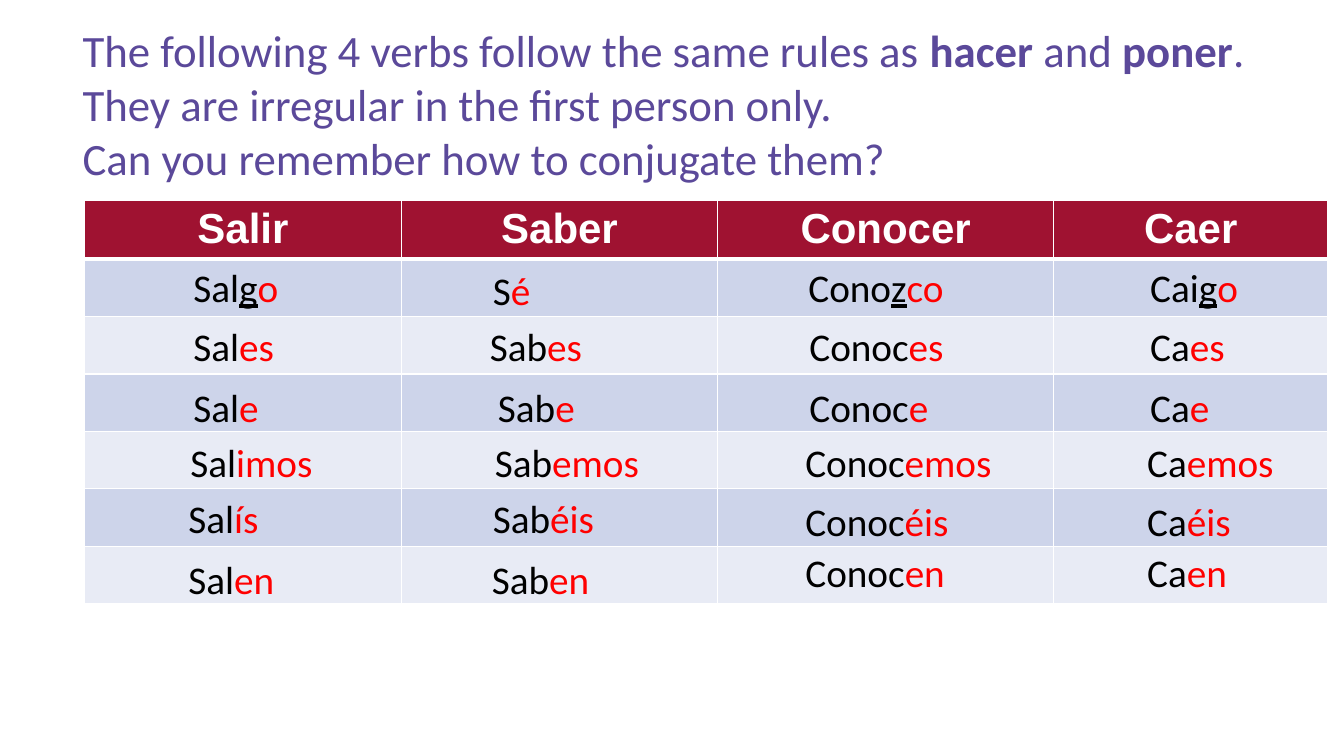
"""Build a slide on Spanish verbs that are irregular in the first person."""
from lxml import etree
from pptx import Presentation
from pptx.dml.color import RGBColor
from pptx.enum.text import MSO_AUTO_SIZE, PP_ALIGN
from pptx.oxml import parse_xml
from pptx.util import Inches, Pt

NS = "http://schemas.openxmlformats.org/drawingml/2006/main"
PURPLE, CRIMSON, WHITE = "5B499A", "9F1231", "FFFFFF"
BLACK, RED = "000000", "FF0000"
BANDS = ["E8EBF5", "CDD4EA"]


def rgb(color):
    """Turn a hex string into a colour."""
    return RGBColor.from_string(color)


def add_run(p, text, color, **formats):
    """Add a run of text with its font formats."""
    r = p.add_run()
    r.text = text
    r.font.color.rgb = rgb(color)
    for name, value in formats.items():
        setattr(r.font, name, value)


prs = Presentation()
prs.slide_width, prs.slide_height = Inches(13.33), Inches(7.5)
s = prs.slides.add_slide(prs.slide_layouts[6])

verbs = ["Salir", "Saber", "Conocer", "Caer"]
col_widths = [3.14, 3.14, 3.33, 2.72]
row_heights = [0.58] + [0.57] * 6
table = s.shapes.add_table(7, 4, Inches(0.84), Inches(1.99), Inches(12.33), Inches(4)).table
for col, width in zip(table.columns, col_widths):
    col.width = Inches(width)
for row, height in zip(table.rows, row_heights):
    row.height = Inches(height)

for i, row in enumerate(table.rows):
    for j, cell in enumerate(row.cells):
        cell.margin_left = cell.margin_right = Inches(0.08)
        cell.margin_top = cell.margin_bottom = Inches(0.05)
        tcPr = cell._tc.get_or_add_tcPr()
        for side in "LRTB":
            points = 3 if (i, side) in [(0, "B"), (1, "T")] else 1
            tcPr.append(parse_xml(
                f'<a:ln{side} xmlns:a="{NS}" w="{Pt(points)}"><a:solidFill>'
                f'<a:srgbClr val="{WHITE}"/></a:solidFill></a:ln{side}>'))
        cell.fill.solid()
        cell.fill.fore_color.rgb = rgb(BANDS[i % 2] if i else CRIMSON)
        if i == 0:
            p = cell.text_frame.paragraphs[0]
            p.alignment = PP_ALIGN.CENTER
            add_run(p, verbs[j], WHITE, name="Arial", size=Pt(30), bold=True)

title = [
    [("The following 4 verbs follow the same rules as ", False), ("hacer ", True),
     ("and ", False), ("poner", True), (".", False)],
    [("They are irregular in the first person only.", False)],
    [("Can you remember how to conjugate them?", False)],
]
tf = s.shapes.add_textbox(Inches(0.72), Inches(0.18), Inches(13.01), Inches(1.23)).text_frame
tf.word_wrap = True
for i, line in enumerate(title):
    p = tf.add_paragraph() if i else tf.paragraphs[0]
    for text, bold in line:
        add_run(p, text, PURPLE, name="Calibri", size=Pt(32), bold=bold)

# stem, underlined letter, ending, left, top, width
forms = [
    ("Sal", "g", "o", 1.82, 2.56, 1.65),
    ("Sal", "", "es", 1.82, 3.15, 1.36),
    ("Sal", "", "e", 1.82, 3.75, 1.02),
    ("Sal", "", "imos", 1.79, 4.3, 1.59),
    ("Sal", "", "ís", 1.77, 4.85, 1.07),
    ("Sal", "", "en", 1.77, 5.46, 1.19),
    ("S", "", "é", 4.79, 2.59, 1.95),
    ("Sab", "", "es", 4.76, 3.15, 1.83),
    ("Sab", "", "e", 4.84, 3.75, 1.02),
    ("Sab", "", "emos", 4.81, 4.3, 1.95),
    ("Sab", "", "éis", 4.79, 4.85, 1.54),
    ("Sab", "", "en", 4.78, 5.46, 1.54),
    ("Cono", "z", "co", 7.92, 2.56, 2.06),
    ("Conoc", "", "es", 7.93, 3.15, 1.76),
    ("Conoc", "", "e", 7.93, 3.75, 1.65),
    ("Conoc", "", "emos", 7.89, 4.3, 2.06),
    ("Conoc", "", "éis", 7.89, 4.88, 2.06),
    ("Conoc", "", "en", 7.89, 5.39, 1.95),
    ("Cai", "g", "o", 11.31, 2.56, 1.36),
    ("Ca", "", "es", 11.31, 3.15, 1.95),
    ("Ca", "", "e", 11.31, 3.75, 1.19),
    ("Ca", "", "emos", 11.28, 4.3, 1.83),
    ("Ca", "", "éis", 11.28, 4.88, 1.95),
    ("Ca", "", "en", 11.28, 5.39, 1.59),
]
for stem, letter, ending, left, top, width in forms:
    tf = s.shapes.add_textbox(Inches(left), Inches(top), Inches(width), Inches(0.57)).text_frame
    tf.word_wrap = True
    tf.auto_size = MSO_AUTO_SIZE.SHAPE_TO_FIT_TEXT
    p = tf.paragraphs[0]
    for text, color, underline in [(stem, BLACK, False), (letter, BLACK, True), (ending, RED, False)]:
        if text:
            add_run(p, text, color, name="Calibri", size=Pt(28), underline=underline)

prs.save("out.pptx")
